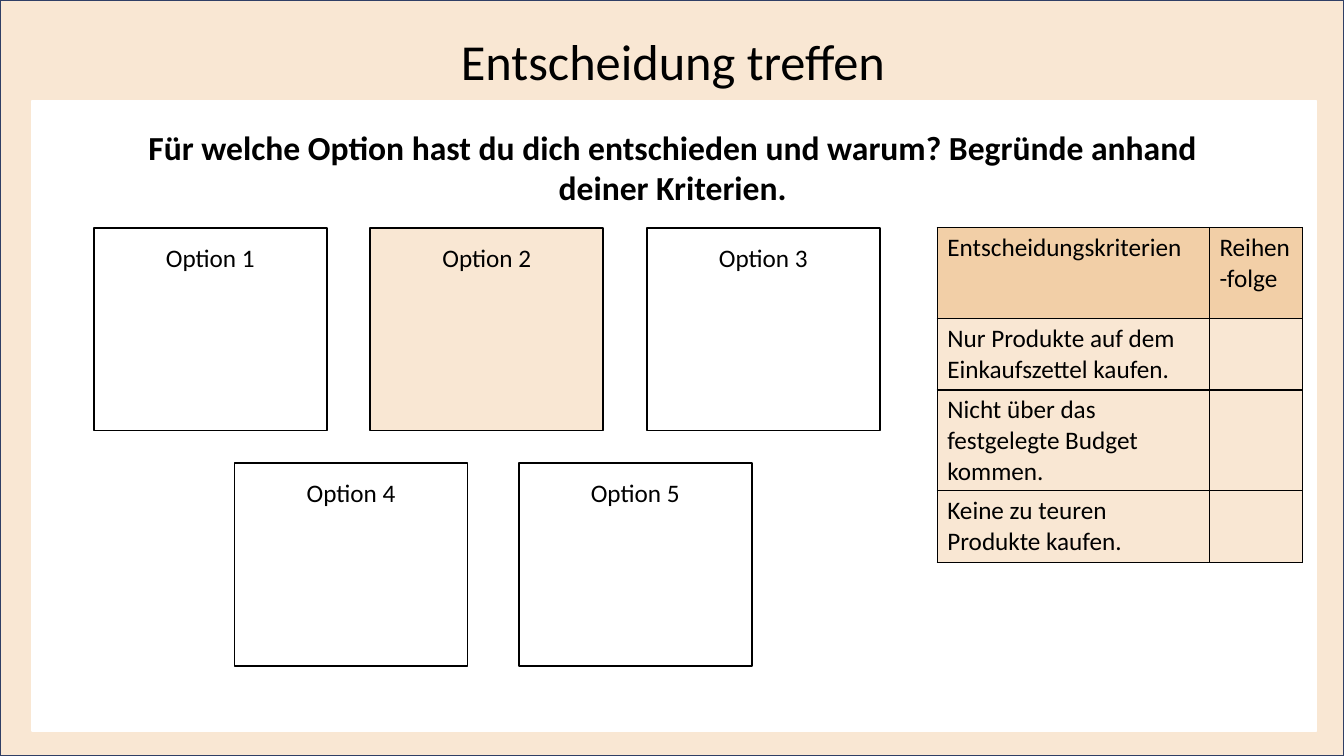
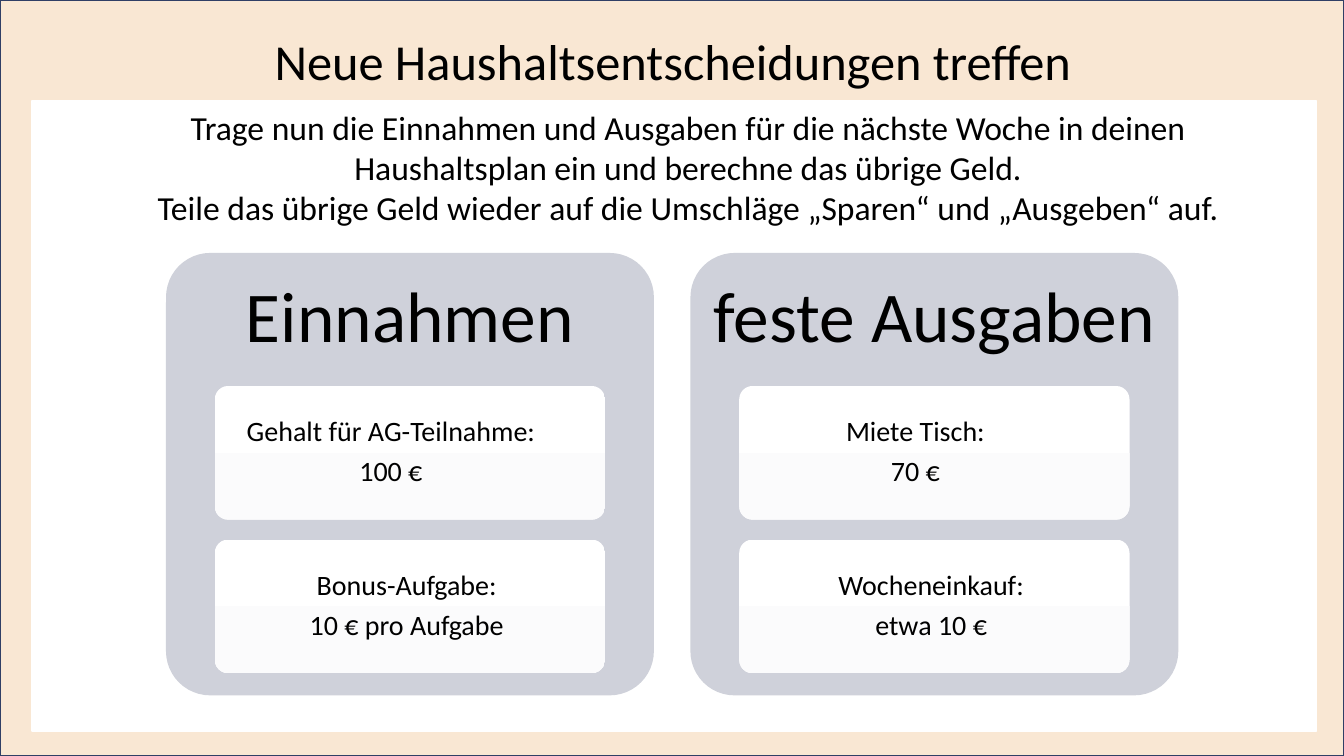
from lxml import etree
from pptx import Presentation
from pptx.dml.color import RGBColor
from pptx.enum.shapes import MSO_SHAPE
from pptx.enum.text import MSO_ANCHOR, PP_ALIGN
from pptx.oxml.ns import qn
from pptx.util import Pt

RECTANGLE, ROUNDED = MSO_SHAPE.RECTANGLE, MSO_SHAPE.ROUNDED_RECTANGLE
TOP, MIDDLE = MSO_ANCHOR.TOP, MSO_ANCHOR.MIDDLE
LEFT, CENTER = PP_ALIGN.LEFT, PP_ALIGN.CENTER

FONT = "Calibri"
BLACK, WHITE = "000000", "FFFFFF"
CREAM, SAND, NAVY, GREY, CARD_END = "F9E7D3", "F2CFA7", "303F65", "CFD1DA", "FBFBFC"
SLIDE_WIDTH, SLIDE_HEIGHT = 960, 540


def color(value):
    return RGBColor.from_string(value)


def add_run(paragraph, text, size, bold=False):
    run = paragraph.add_run()
    run.text = text
    run.font.name, run.font.size, run.font.bold = FONT, Pt(size), bold
    run.font.color.rgb = color(BLACK)


def write(frame, lines, size, bold=False, anchor=TOP, inset=(7.2, 3.6), spaced=False):
    """Fill a frame with centred lines, each given as (text, right indent)."""
    frame.word_wrap = True
    frame.vertical_anchor = anchor
    frame.margin_left = frame.margin_right = Pt(inset[0])
    frame.margin_top = frame.margin_bottom = Pt(inset[1])
    for index, (text, indent) in enumerate(lines):
        paragraph = frame.add_paragraph() if index else frame.paragraphs[0]
        paragraph.alignment = CENTER
        if indent:
            paragraph._p.get_or_add_pPr().set("marR", str(Pt(indent)))
        if spaced:
            paragraph.line_spacing = 0.9
            paragraph.space_after = Pt(0.35 * size)
        add_run(paragraph, text, size, bold)


def add_text(slide, box, lines, size, **style):
    shape = slide.shapes.add_textbox(*map(Pt, box))
    write(shape.text_frame, [(line, 0) for line in lines], size, **style)


def add_box(slide, box, fill, line=None, kind=RECTANGLE):
    shape = slide.shapes.add_shape(kind, *map(Pt, box))
    shape.shadow.inherit = False
    shape.fill.solid()
    shape.fill.fore_color.rgb = color(fill)
    if line:
        shape.line.color.rgb = color(line)
        shape.line.width = Pt(1.25)
    else:
        shape.line.fill.background()
    if kind == ROUNDED:
        shape.adjustments[0] = 0.1
    return shape


def add_framed_slide(presentation, title):
    """Start a slide with the shared frame, white panel and title."""
    slide = presentation.slides.add_slide(presentation.slide_layouts[6])
    add_box(slide, (0, 0, SLIDE_WIDTH, SLIDE_HEIGHT), CREAM, NAVY)
    add_box(slide, (23, 72, 917.5, 450), WHITE, WHITE)
    add_text(slide, (22, 18, 917.5, 51), [title], 36)
    return slide


def add_option(slide, number, left, top, fill):
    shape = add_box(slide, (left, top, 166.5, 144.5), fill, BLACK)
    write(shape.text_frame, [(f"Option {number}", 0)], 18, inset=(7.2, 10))


def add_cell_borders(cell):
    properties = cell._tc.get_or_add_tcPr()
    for position, side in enumerate(("lnL", "lnR", "lnT", "lnB")):
        border = etree.Element(qn(f"a:{side}"), w=str(Pt(1)))
        fill = etree.SubElement(border, qn("a:solidFill"))
        etree.SubElement(fill, qn("a:srgbClr"), val=BLACK)
        properties.insert(position, border)


def add_criteria_table(slide, left, top, widths, heights, rows):
    table = slide.shapes.add_table(
        len(rows), len(widths), Pt(left), Pt(top), Pt(sum(widths)), Pt(sum(heights))
    ).table
    table.first_row = table.horz_banding = False
    for column, width in zip(table.columns, widths):
        column.width = Pt(width)
    for row_index, (height, texts) in enumerate(zip(heights, rows)):
        table.rows[row_index].height = Pt(height)
        for column_index, text in enumerate(texts):
            cell = table.cell(row_index, column_index)
            cell.fill.solid()
            cell.fill.fore_color.rgb = color(CREAM if row_index else SAND)
            add_cell_borders(cell)
            if text:
                paragraph = cell.text_frame.paragraphs[0]
                paragraph.alignment = LEFT
                add_run(paragraph, text, 18)


def add_card(slide, left, top, lines):
    card = add_box(slide, (left, top, 278.8, 95.5), WHITE, kind=ROUNDED)
    card.fill.gradient()
    card.fill.gradient_angle = 270
    for stop, value in zip(card.fill.gradient_stops, (WHITE, CARD_END)):
        stop.color.rgb = color(value)
    write(card.text_frame, lines, 20, anchor=MIDDLE, inset=(4.3, 2.9), spaced=True)


def add_budget_column(slide, left, heading, cards):
    top, width = 180.7, 348.5
    add_box(slide, (left, top, width, 316), GREY, kind=ROUNDED)
    add_text(slide, (left, top, width, 95), [heading], 51,
             anchor=MIDDLE, inset=(15, 15), spaced=True)
    for index, (label, indent, amount) in enumerate(cards):
        add_card(slide, left + 34.8, top + 95 + 109.7 * index,
                 [(label, indent), (amount, 0)])


def build_decision_slide(presentation):
    slide = add_framed_slide(presentation, "Entscheidung treffen")
    add_text(slide, (77, 87, 807, 66), [
        "Für welche Option hast du dich entschieden und warum? "
        "Begründe anhand deiner Kriterien."], 24, bold=True)

    # Options: three above, two below
    chosen, number = 2, 0
    for left, top, pitch, count in ((67, 163, 197.5, 3), (167.5, 331, 203, 2)):
        for index in range(count):
            number += 1
            add_option(slide, number, left + pitch * index, top,
                       CREAM if number == chosen else WHITE)

    # Criteria and their ranking
    add_criteria_table(slide, 669.5, 162.5, (194.4, 66.3), (65, 51, 72, 51), (
        ("Entscheidungskriterien", "Reihen-folge"),
        ("Nur Produkte auf dem Einkaufszettel kaufen.", ""),
        ("Nicht über das festgelegte Budget kommen.", ""),
        ("Keine zu teuren Produkte kaufen.", ""),
    ))


def build_budget_slide(presentation):
    slide = add_framed_slide(presentation, "Neue Haushaltsentscheidungen treffen")
    add_text(slide, (88, 72.5, 807, 95), [
        "Trage nun die Einnahmen und Ausgaben für die nächste Woche in deinen "
        "Haushaltsplan ein und berechne das übrige Geld.",
        "Teile das übrige Geld wieder auf die Umschläge „Sparen“ und „Ausgeben“ auf.",
    ], 24)

    # Income and fixed expenses: label, right indent, amount
    columns = (
        ("Einnahmen", (("Gehalt für AG-Teilnahme:", 27, "100 €"),
                       ("Bonus-Aufgabe:", 4.5, "10 € pro Aufgabe"))),
        ("feste Ausgaben", (("Miete Tisch:", 27, "70 €"),
                            ("Wocheneinkauf:", 4.5, "etwa 10 €"))),
    )
    for index, (heading, cards) in enumerate(columns):
        add_budget_column(slide, 118.6 + 374.6 * index, heading, cards)


def main():
    presentation = Presentation()
    presentation.slide_width, presentation.slide_height = Pt(SLIDE_WIDTH), Pt(SLIDE_HEIGHT)
    build_decision_slide(presentation)
    build_budget_slide(presentation)
    presentation.save("out.pptx")


if __name__ == "__main__":
    main()
